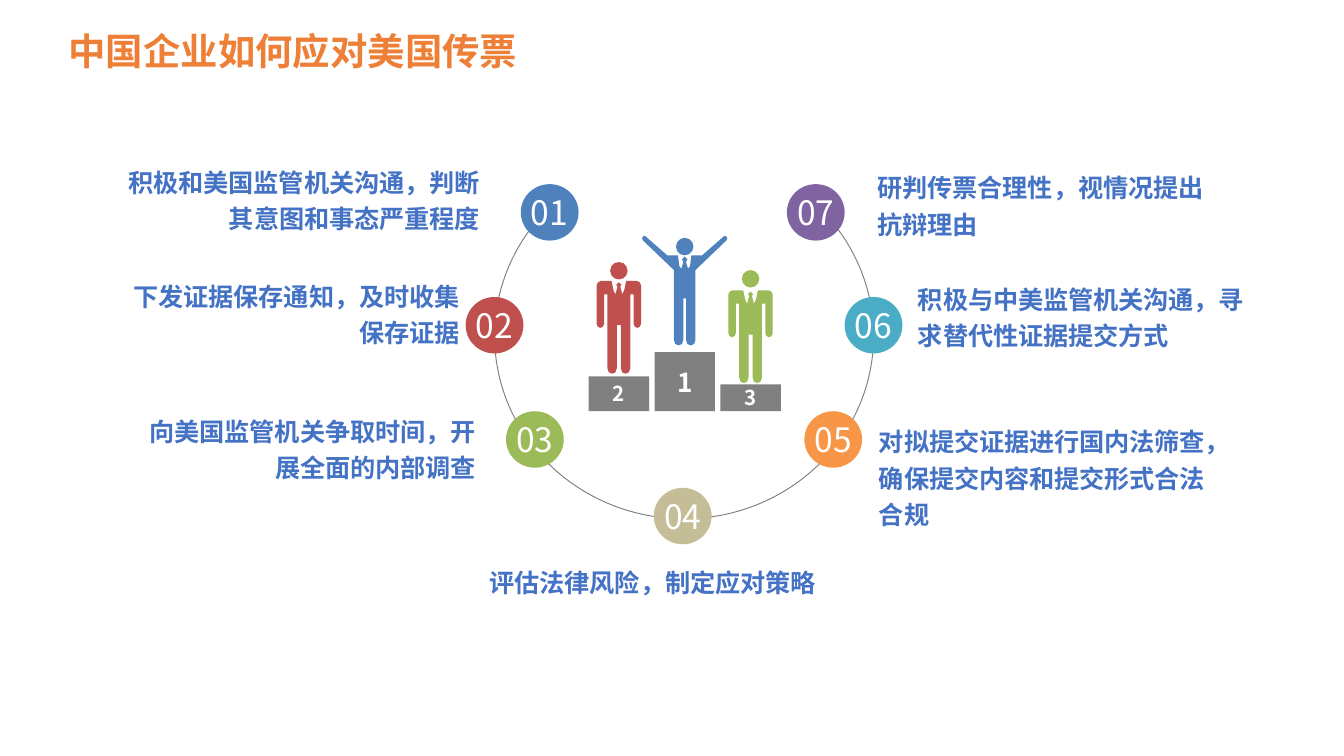
from lxml.etree import SubElement
from pptx import Presentation
from pptx.dml.color import RGBColor
from pptx.enum.shapes import MSO_SHAPE as Shape
from pptx.enum.text import MSO_ANCHOR as Anchor, MSO_AUTO_SIZE as AutoSize, PP_ALIGN as Align
from pptx.oxml.ns import qn
from pptx.util import Inches, Pt

COLORS = {
    "blue": "4F81BD", "red": "C0504D", "green": "9BBB59", "sand": "C4BD97",
    "orange": "F79646", "teal": "4BACC6", "purple": "8064A2", "gray": "808080",
    "white": "FFFFFF", "advice": "4472C4", "title": "ED8036",
}
CJK_FONT = "Noto Sans CJK SC"
TITLE = "中国企业如何应对美国传票"

ROWS = [1.58, 2.42, 3.27, 3.84]
STEPS = [
    ("01", "blue", 4.09, 0, "积极和美国监管机关沟通，判断其意图和事态严重程度", (0.87, 1.2, 2.7, 0.46), Align.RIGHT),
    ("02", "red", 3.68, 1, "下发证据保存通知，及时收集保存证据", (0.84, 2.05, 2.58, 0.46), Align.RIGHT),
    ("03", "green", 3.98, 2, "向美国监管机关争取时间，开展全面的内部调查", (0.93, 3.05, 2.61, 0.46), Align.RIGHT),
    ("04", "sand", 5.08, 3, "评估法律风险，制定应对策略", (3.46, 4.18, 2.61, 0.22), Align.RIGHT),
    ("05", "orange", 6.2, 2, "对拟提交证据进行国内法筛查，确保提交内容和提交形式合法合规", (6.54, 3.13, 2.61, 0.46), Align.LEFT),
    ("06", "teal", 6.5, 1, "积极与中美监管机关沟通，寻求替代性证据提交方式", (6.83, 2.07, 2.61, 0.46), Align.LEFT),
    ("07", "purple", 6.07, 0, "研判传票合理性，视情况提出抗辩理由", (6.53, 1.24, 2.61, 0.46), Align.LEFT),
]
BADGE_W, BADGE_H = 0.43, 0.42

RING = (3.68, 1.14, 2.82, 2.72)
RING_START, RING_END = 311.5, 228.5

# Right half of each body, in hundredths of an inch from the top of its centre line.
STANDING = [
    (0, 1), (2, 3), (1, 4), (2.5, 10), (4, 7), (5.5, 0), (13.5, 0), (15.5, 1), (16.5, 3),
    (16.5, 32), (15.7, 34), (13.8, 35), (11.8, 34), (11, 32), (11, 10), (8.5, 10),
    (8.5, 65), (7.5, 68), (5, 69), (2.5, 68), (1.5, 65), (1.5, 33),
]
CHEERING = [
    (0, 16), (2, 18), (1, 20), (2.5, 25), (4, 23), (5, 15), (13, 15), (29, 1), (30, 0.5),
    (31, 1), (31.7, 2.5), (31, 4), (8, 26), (8, 78), (7, 81), (4.5, 82), (2, 81), (1, 78), (1, 47),
]
PODIUM = [
    ("2", 0.26, 11, "red", STANDING, 2.09, 1.95),
    ("1", 0.44, 14, "blue", CHEERING, 1.75, 1.77),
    ("3", 0.2, 11, "green", STANDING, 2.16, 2.01),
]
PODIUM_LEFT, PODIUM_BASE, BLOCK_W, BLOCK_GAP = 4.38, 3.06, 0.45, 0.04
HEAD = 0.13


def rgb(name):
    return RGBColor.from_string(COLORS[name])


def paint(part, color):
    part.shadow.inherit = False
    part.fill.solid()
    part.fill.fore_color.rgb = rgb(color)
    part.line.fill.background()


def write(part, words, size, color, align, bold=False, anchor=Anchor.TOP, wrap=True, latin=CJK_FONT):
    frame = part.text_frame
    frame.text = words
    frame.word_wrap = wrap
    frame.vertical_anchor = anchor
    frame.margin_left = frame.margin_right = frame.margin_top = frame.margin_bottom = 0
    paragraph = frame.paragraphs[0]
    paragraph.alignment = align
    run = paragraph.runs[0]
    run.font.size, run.font.bold, run.font.name = Pt(size), bold, latin
    run.font.color.rgb = rgb(color)
    SubElement(run.font._element, qn("a:ea")).set("typeface", CJK_FONT)
    return paragraph


def add_filled(shapes, kind, left, top, width, height, color):
    part = shapes.add_shape(kind, *map(Inches, (left, top, width, height)))
    paint(part, color)
    return part


def add_body(shapes, half, center, top, color):
    mirrored = [(-x, y) for x, y in reversed(half) if x]
    outline = [(Inches(center + x / 100), Inches(top + y / 100)) for x, y in half + mirrored]
    builder = shapes.build_freeform(*outline[0])
    builder.add_line_segments(outline[1:], close=True)
    paint(builder.convert_to_shape(), color)


def add_title(slide):
    title = slide.shapes.title
    title.left, title.top, title.width, title.height = map(Inches, (0.51, 0.21, 3.37, 0.34))
    paragraph = write(title, TITLE, 20, "title", Align.LEFT, bold=True, wrap=False, latin="Roboto Condensed")
    paragraph.line_spacing = 1.0
    title.text_frame.auto_size = AutoSize.SHAPE_TO_FIT_TEXT


def add_ring(shapes):
    ring = shapes.add_shape(Shape.ARC, *map(Inches, RING))
    ring.adjustments[0] = RING_START * 0.6
    ring.adjustments[1] = RING_END * 0.6
    ring.shadow.inherit = False
    ring.fill.background()
    ring.line.color.rgb = rgb("gray")
    ring.line.width = Pt(0.5)


def add_step(shapes, number, color, center, row, advice, box, align):
    badge = add_filled(shapes, Shape.OVAL, center - BADGE_W / 2, ROWS[row] - BADGE_H / 2,
                       BADGE_W, BADGE_H, color)
    write(badge, number, 18, "white", Align.CENTER, anchor=Anchor.MIDDLE, wrap=False)
    note = shapes.add_textbox(*map(Inches, box))
    write(note, advice, 13.5, "advice", align, bold=True).line_spacing = 1.2
    note.text_frame.auto_size = AutoSize.SHAPE_TO_FIT_TEXT


def add_podium(shapes):
    for place, (rank, height, size, color, half, body_top, head_top) in enumerate(PODIUM):
        left = PODIUM_LEFT + place * (BLOCK_W + BLOCK_GAP)
        center = left + BLOCK_W / 2
        block = add_filled(shapes, Shape.RECTANGLE, left, PODIUM_BASE - height, BLOCK_W, height, "gray")
        write(block, rank, size, "white", Align.CENTER, bold=True, anchor=Anchor.MIDDLE)
        add_filled(shapes, Shape.OVAL, center - HEAD / 2, head_top, HEAD, HEAD, color)
        add_body(shapes, half, center, body_top, color)


def main():
    deck = Presentation()
    deck.slide_width = Inches(10)
    deck.slide_height = deck.slide_width * 9 // 16
    slide = deck.slides.add_slide(deck.slide_layouts[5])
    add_title(slide)
    add_ring(slide.shapes)
    for step in STEPS:
        add_step(slide.shapes, *step)
    add_podium(slide.shapes)
    deck.save("out.pptx")


if __name__ == "__main__":
    main()
